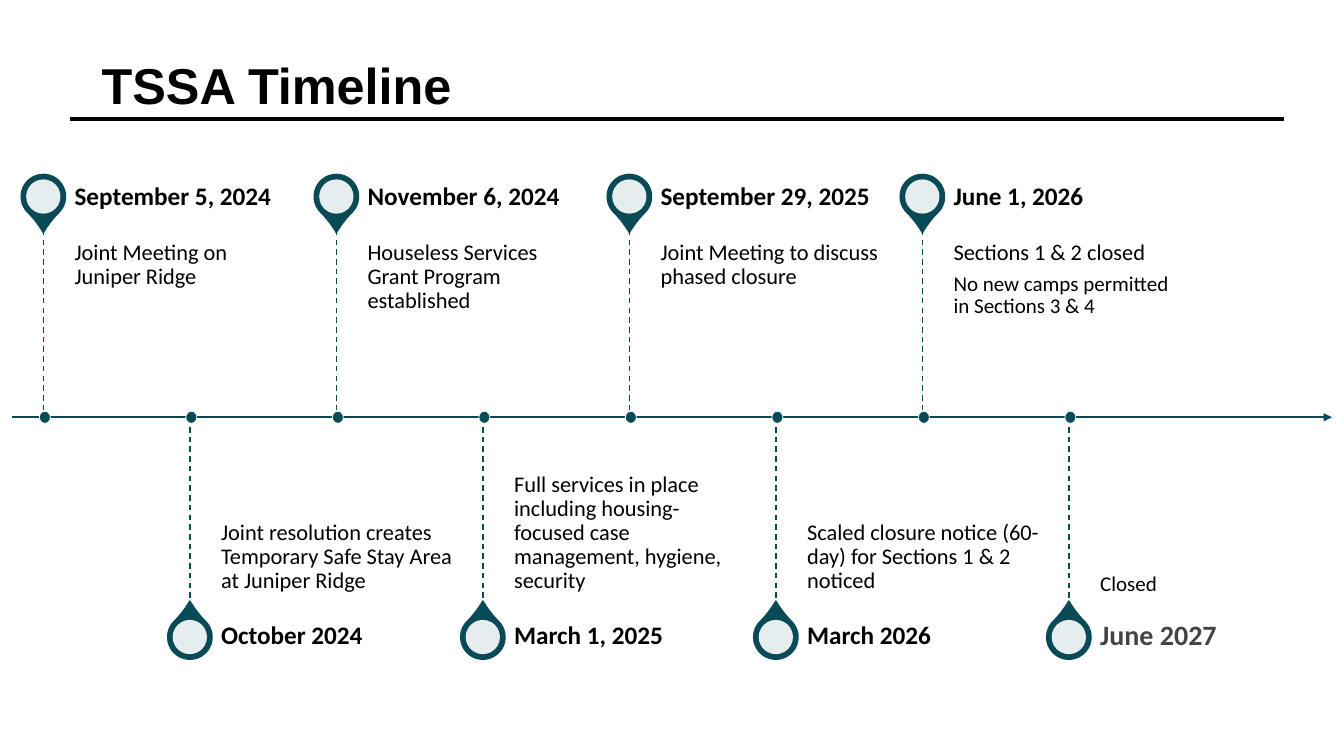
from lxml import etree
from pptx import Presentation
from pptx.dml.color import RGBColor
from pptx.enum.dml import MSO_LINE as Dash
from pptx.enum.shapes import MSO_CONNECTOR as Conn, MSO_SHAPE as Kind
from pptx.enum.text import MSO_ANCHOR as Anchor
from pptx.oxml.ns import qn
from pptx.util import Inches, Pt

TEAL = RGBColor(0x08, 0x4A, 0x55)
BLACK = RGBColor(0, 0, 0)
WHITE = RGBColor(0xFF, 0xFF, 0xFF)
GRAY = RGBColor(0x44, 0x44, 0x44)

AXIS = 4.14    # height of the time axis
FIRST = 0.43   # first event
STEP = 1.453   # gap between events

# Date, date size, date colour, then notes as (text, size); odd events hang below
EVENTS = [
    ("September 5, 2024", 18, BLACK, [("Joint Meeting on Juniper Ridge", 16)]),
    ("October 2024", 18, BLACK,
     [("Joint resolution creates Temporary Safe Stay Area at Juniper Ridge", 16)]),
    ("November 6, 2024", 18, BLACK,
     [("Houseless Services Grant Program established", 16)]),
    ("March 1, 2025", 18, BLACK,
     [("Full services in place including housing-focused case management, "
       "hygiene, security", 16)]),
    ("September 29, 2025", 18, BLACK,
     [("Joint Meeting to discuss phased closure", 16)]),
    ("March 2026", 18, BLACK,
     [("Scaled closure notice (60-day) for Sections 1 & 2 noticed", 16)]),
    ("June 1, 2026", 18, BLACK,
     [("Sections 1 & 2 closed", 16),
      ("No new camps permitted in Sections 3 & 4", 15)]),
    ("June 2027", 20, GRAY, [("Closed", 15)]),
]


def add_line(slide, x1, y1, x2, y2, color, width, dash=None, arrow=False):
    line = slide.shapes.add_connector(
        Conn.STRAIGHT, Inches(x1), Inches(y1), Inches(x2), Inches(y2))
    line.line.color.rgb = color
    line.line.width = Pt(width)
    if dash:
        line.line.dash_style = dash
    if arrow:
        etree.SubElement(line.line._get_or_add_ln(), qn("a:tailEnd"), type="triangle")
    etree.SubElement(line._element.spPr, qn("a:effectLst"))


def add_shape(slide, kind, x, y, w, h, fill, edge=None, width=1):
    shape = slide.shapes.add_shape(kind, Inches(x), Inches(y), Inches(w), Inches(h))
    shape.shadow.inherit = False
    shape.fill.solid()
    shape.fill.fore_color.rgb = fill
    if edge is None:
        shape.line.fill.background()
    else:
        shape.line.color.rgb = edge
        shape.line.width = Pt(width)
    return shape


def add_text(slide, x, y, w, h, paras, anchor, insets, font="Calibri",
             color=BLACK, bold=False, after=0.35):
    frame = slide.shapes.add_textbox(
        Inches(x), Inches(y), Inches(w), Inches(h)).text_frame
    frame.word_wrap = True
    frame.vertical_anchor = anchor
    (frame.margin_left, frame.margin_top,
     frame.margin_right, frame.margin_bottom) = map(Inches, insets)
    for i, (text, size) in enumerate(paras):
        para = frame.add_paragraph() if i else frame.paragraphs[0]
        para.line_spacing = 0.9
        para.space_after = Pt(size * after)
        run = para.add_run()
        run.text = text
        run.font.name = font
        run.font.size = Pt(size)
        run.font.bold = bold
        run.font.color.rgb = color


def add_pin(slide, x, y, angle):
    drop = add_shape(slide, Kind.TEAR, x - 0.22, y - 0.22, 0.44, 0.44, TEAL, TEAL)
    drop.adjustments[0] = 1.15
    drop.rotation = angle
    hole = add_shape(slide, Kind.OVAL, x - 0.17, y - 0.17, 0.34, 0.34, WHITE)
    tint = hole.fill._xPr.find(qn("a:solidFill"))[0]
    etree.SubElement(tint, qn("a:alpha"), val="90000")


def add_event(slide, x, below, date, size, color, notes):
    if below:
        pin, angle, tip, top, label = 6.32, 315, 5.99, AXIS, 5.99
        anchor, insets = Anchor.BOTTOM, (0, 0.17, 0, 0.11)
    else:
        pin, angle, tip, top, label = 1.95, 135, 2.28, 2.28, 1.63
        anchor, insets = Anchor.TOP, (0, 0.11, 0.11, 0.17)
    left = x + 0.31
    add_pin(slide, x, pin, angle)
    add_text(slide, left, top, 2.3, 1.86, notes, anchor, insets)
    add_text(slide, left, label, 2.3, 0.65, [(date, size)], Anchor.MIDDLE,
             (0, 0, 0.12, 0), color=color, bold=True)
    add_line(slide, x, min(tip, AXIS), x, max(tip, AXIS), TEAL, 1, Dash.DASH)
    add_shape(slide, Kind.OVAL, x - 0.04, AXIS - 0.06, 0.11, 0.12, TEAL, WHITE, 0.5)


def main():
    deck = Presentation()
    deck.slide_width, deck.slide_height = Inches(13.33), Inches(7.5)
    slide = deck.slides.add_slide(deck.slide_layouts[6])

    # Title and rule
    add_line(slide, 12.74, 1.18, 0.69, 1.18, BLACK, 3)
    add_text(slide, 0.91, 0.54, 11.5, 0.65, [("TSSA Timeline", 36)], Anchor.BOTTOM,
             (0.1, 0.05, 0.1, 0.05), font="Arial", bold=True, after=0)

    # Time axis and events
    add_line(slide, 0.12, AXIS, 13.21, AXIS, TEAL, 1.5, arrow=True)
    for i, event in enumerate(EVENTS):
        add_event(slide, FIRST + i * STEP, i % 2 == 1, *event)

    deck.save("out.pptx")


if __name__ == "__main__":
    main()
